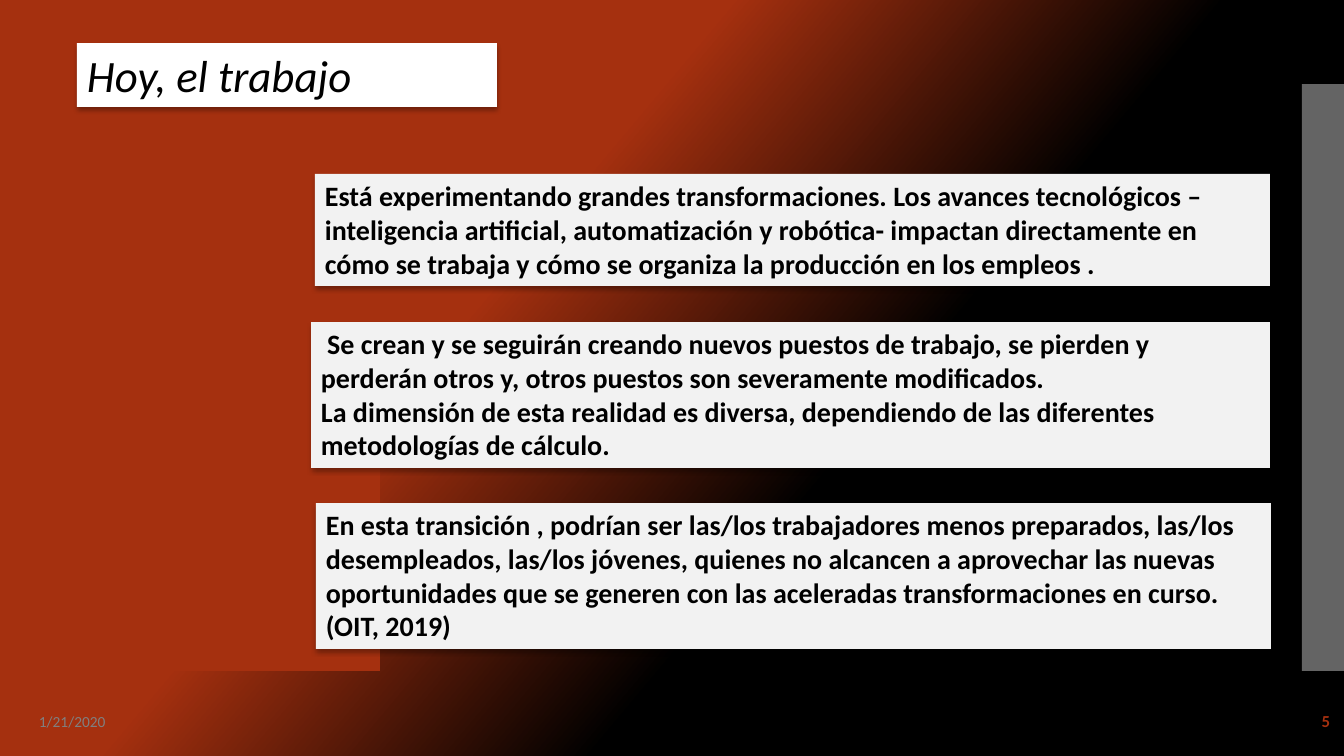
"""Builds the slide on how work is changing today."""
from dataclasses import dataclass

from lxml import etree
from pptx import Presentation
from pptx import util as u
from pptx.dml.color import RGBColor
from pptx.enum import shapes, text
from pptx.oxml import ns

PX = 914400 / 100.8
WIDTH, HEIGHT = 1344, 756


@dataclass(frozen=True)
class Theme:
    """Colours, font and type sizes of the slide."""
    rust: str = "A5300F"
    black: str = "000000"
    white: str = "FFFFFF"
    card: str = "F2F2F2"
    band: str = "C8C8C8"
    muted: str = "808080"
    font: str = "Calibri"
    title: int = 32
    body: int = 20
    number: int = 12
    date: int = 11


THEME = Theme()

CARDS = [
    ((315, 174, 955, 112), "Está experimentando grandes transformaciones. Los avances tecnológicos "
     "– inteligencia artificial, automatización y robótica- impactan directamente en cómo se "
     "trabaja y cómo se organiza la producción en los empleos ."),
    ((311, 322, 959, 146), " Se crean y se seguirán creando nuevos puestos de trabajo, se pierden y "
     "perderán otros y, otros puestos son severamente modificados.\n"
     "La dimensión de esta realidad es diversa, dependiendo de las diferentes "
     "metodologías de cálculo."),
    ((316, 503, 955, 146), "En esta transición , podrían ser las/los trabajadores menos preparados, "
     "las/los desempleados, las/los jóvenes, quienes no alcancen a aprovechar las nuevas "
     "oportunidades que se generen con las aceleradas transformaciones en curso. (OIT, 2019)"),
]


def emu(box):
    """Turn a box in px into EMU lengths."""
    return [u.Emu(round(v * PX)) for v in box]


def add_rect(slide, box, color):
    """Add a plain filled rectangle."""
    sp = slide.shapes.add_shape(shapes.MSO_SHAPE.RECTANGLE, *emu(box))
    sp.fill.solid()
    sp.fill.fore_color.rgb = RGBColor.from_string(color)
    sp.line.fill.background()
    sp.shadow.inherit = False
    return sp


def write(sp, content, size, color=THEME.black, bold=False, italic=False,
          align=text.PP_ALIGN.LEFT, anchor=text.MSO_ANCHOR.TOP):
    """Write formatted text into a shape, one paragraph per line."""
    tf = sp.text_frame
    tf.word_wrap = True
    tf.vertical_anchor = anchor
    tf.text = content
    for p in tf.paragraphs:
        p.alignment = align
        for r in p.runs:
            r.font.name, r.font.size = THEME.font, u.Pt(size)
            r.font.bold, r.font.italic = bold, italic
            r.font.color.rgb = RGBColor.from_string(color)


def add_card(slide, box, color, content, size, **fmt):
    """Add a text card with a soft shadow below it."""
    sp = add_rect(slide, box, color)
    effects = sp._element.spPr.find(ns.qn("a:effectLst"))
    shadow = etree.SubElement(effects, ns.qn("a:outerShdw"), blurRad=str(u.Pt(3.5)),
                              dist=str(u.Pt(2.2)), dir="5400000", rotWithShape="0")
    tint = etree.SubElement(shadow, ns.qn("a:srgbClr"), val=THEME.black)
    etree.SubElement(tint, ns.qn("a:alpha"), val="32000")
    write(sp, content, size, **fmt)
    sp.text_frame.auto_size = text.MSO_AUTO_SIZE.SHAPE_TO_FIT_TEXT


def paint_background(slide):
    """Fill the background with a diagonal gradient from rust to black."""
    fill = slide.background.fill
    fill.gradient()
    fill.gradient_angle = 320
    stops = ((0.37, THEME.rust), (0.62, THEME.black))
    for stop, (position, color) in zip(fill.gradient_stops, stops):
        stop.position = position
        stop.color.rgb = RGBColor.from_string(color)


def add_bands(slide, box):
    """Place the rust block at the left and the translucent band at the right."""
    x, y, w, h = box
    block, band = 380, 42
    add_rect(slide, (x, y, block, h), THEME.rust)
    sp = add_rect(slide, (x + w - band, y, band, h), THEME.band)
    color = sp._element.spPr.find(ns.qn("a:solidFill"))[0]
    etree.SubElement(color, ns.qn("a:alpha"), val="50000")


def add_footer(slide, box):
    """Place the date at the left and the page number at the right."""
    x, y, w, h = box
    date, number = 302, 168
    middle = text.MSO_ANCHOR.MIDDLE
    sp = slide.shapes.add_textbox(*emu((x, y, date, h)))
    write(sp, "1/21/2020", THEME.date, color=THEME.muted, anchor=middle)
    sp = slide.shapes.add_textbox(*emu((x + w - number, y, number, h)))
    write(sp, "5", THEME.number, color=THEME.rust, bold=True,
          align=text.PP_ALIGN.RIGHT, anchor=middle)


def main():
    """Build and save the slide."""
    prs = Presentation()
    prs.slide_width, prs.slide_height = emu((WIDTH, HEIGHT))
    s = prs.slides.add_slide(prs.slide_layouts[6])
    paint_background(s)
    add_bands(s, (0, 84, WIDTH, 587))
    add_card(s, (77, 43, 420, 64), THEME.white, "Hoy, el trabajo", THEME.title, italic=True)
    for box, content in CARDS:
        add_card(s, box, THEME.card, content, THEME.body, bold=True)
    add_footer(s, (29, 701, 1311, 40))
    prs.save("out.pptx")


if __name__ == "__main__":
    main()
